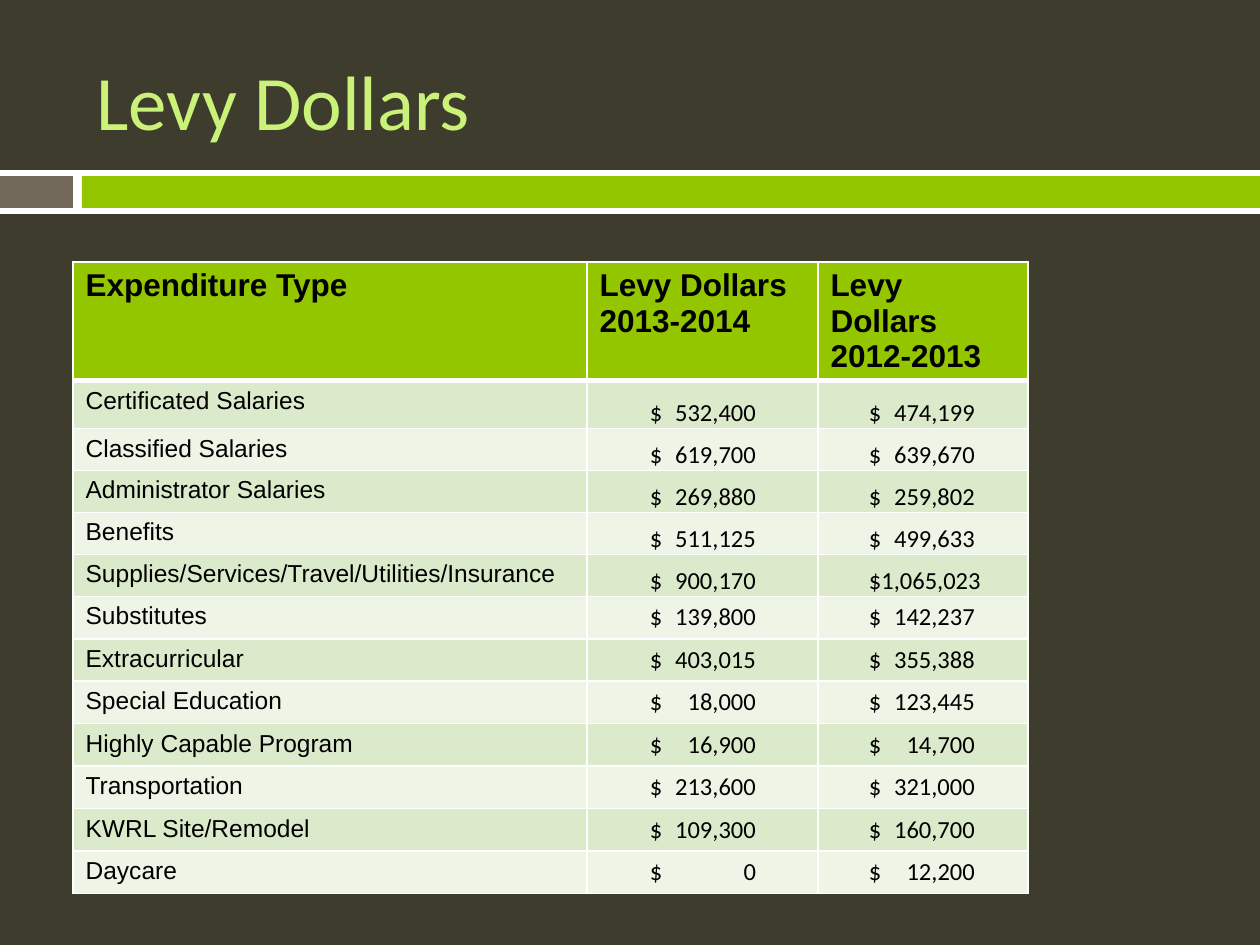
"""Build the Levy Dollars slide with its expenditure table."""
import pptx
import pptx.dml.color
import pptx.enum.shapes
import pptx.enum.text
import pptx.oxml
import pptx.oxml.ns
import pptx.util

ANCHOR = pptx.enum.text.MSO_ANCHOR
TITLE = "Levy Dollars"
BARS = [
    ((0, 170, 1260, 44), "FFFFFF"),
    ((0, 176, 73, 32), "71685A"),
    ((82, 176, 1178, 32), "94C600"),
]
HEADINGS = ["Expenditure Type", "Levy Dollars\n2013-2014", "Levy Dollars\n2012-2013"]
EXPENDITURES = [
    ("Certificated Salaries", "532,400", "474,199"),
    ("Classified Salaries", "619,700", "639,670"),
    ("Administrator Salaries", "269,880", "259,802"),
    ("Benefits", "511,125", "499,633"),
    ("Supplies/Services/Travel/Utilities/Insurance", "900,170", "1,065,023"),
    ("Substitutes", "139,800", "142,237"),
    ("Extracurricular", "403,015", "355,388"),
    ("Special Education", "18,000", "123,445"),
    ("Highly Capable Program", "16,900", "14,700"),
    ("Transportation", "213,600", "321,000"),
    ("KWRL Site/Remodel", "109,300", "160,700"),
    ("Daycare", "0", "12,200"),
]
COLUMN_WIDTHS = [514, 231, 210]
ROW_HEIGHTS = [76, 48] + [42] * 11
DOLLAR_INDENTS = [None, 63, 51]
AMOUNT_TAB = 106
BOTTOM_ANCHORED_ROWS = 5
HEADING_FILL = "94C600"
BAND_FILLS = ["EEF5E7", "DCEACC"]


def px(length):
    return pptx.util.Emu(round(length * 914400 / 126))


def colour(value):
    return pptx.dml.color.RGBColor.from_string(value)


def paint(part, value):
    part.fill.solid()
    part.fill.fore_color.rgb = colour(value)


def write(frame, text, size=14, font="Arial", ink="000000", bold=False, tab=None):
    for number, line in enumerate(text.split("\n")):
        paragraph = frame.add_paragraph() if number else frame.paragraphs[0]
        paragraph.alignment = pptx.enum.text.PP_ALIGN.LEFT
        if tab:
            stops = pptx.oxml.parse_xml(
                f'<a:tabLst {pptx.oxml.ns.nsdecls("a")}>'
                f'<a:tab pos="{px(tab)}" algn="r"/></a:tabLst>')
            paragraph._p.get_or_add_pPr().append(stops)
        run = paragraph.add_run()
        run.text = line
        run.font.size = pptx.util.Pt(size)
        run.font.name = font
        run.font.bold = bold
        run.font.color.rgb = colour(ink)


def outline(cell, top, bottom):
    for side, points in {"L": 1, "R": 1, "T": top, "B": bottom}.items():
        cell._tc.get_or_add_tcPr().append(pptx.oxml.parse_xml(
            f'<a:ln{side} {pptx.oxml.ns.nsdecls("a")} w="{pptx.util.Pt(points)}">'
            f'<a:solidFill><a:srgbClr val="FFFFFF"/></a:solidFill></a:ln{side}>'))


def write_amount(cell, amount, row, indent):
    fits = len(amount) <= len("000,000")
    write(cell.text_frame, f"$\t{amount}" if fits else f"${amount}",
          font="Calibri", tab=AMOUNT_TAB)
    cell.margin_left = px(indent)
    cell.margin_right = px(1)
    if row <= BOTTOM_ANCHORED_ROWS:
        cell.vertical_anchor = ANCHOR.BOTTOM
        cell.margin_top = px(1)
        cell.margin_bottom = 0


def add_expenditures(slide):
    rows = [HEADINGS, *EXPENDITURES]
    table = slide.shapes.add_table(
        len(rows), len(HEADINGS), px(73), px(262),
        px(sum(COLUMN_WIDTHS)), px(sum(ROW_HEIGHTS))).table
    for column, width in zip(table.columns, COLUMN_WIDTHS):
        column.width = px(width)
    for row, (entries, height) in enumerate(zip(rows, ROW_HEIGHTS)):
        table.rows[row].height = px(height)
        for column, entry in enumerate(entries):
            cell = table.cell(row, column)
            outline(cell, 3 if row == 1 else 1, 3 if row == 0 else 1)
            paint(cell, BAND_FILLS[row % 2] if row else HEADING_FILL)
            if row == 0:
                write(cell.text_frame, entry, size=18, bold=True)
            elif column == 0:
                write(cell.text_frame, entry)
            else:
                write_amount(cell, entry, row, DOLLAR_INDENTS[column])


def main():
    deck = pptx.Presentation()
    deck.slide_width, deck.slide_height = px(1260), px(945)
    slide = deck.slides.add_slide(deck.slide_layouts[5])
    paint(slide.background, "3E3D2D")
    for place, fill in BARS:
        bar = slide.shapes.add_shape(
            pptx.enum.shapes.MSO_SHAPE.RECTANGLE, *map(px, place))
        bar.shadow.inherit = False
        paint(bar, fill)
        bar.line.fill.background()
    title = slide.shapes.title
    title.left, title.top, title.width, title.height = map(px, (84, 32, 1124, 136))
    title.text_frame.vertical_anchor = ANCHOR.MIDDLE
    write(title.text_frame, TITLE, size=44, font="Calibri", ink="CAF278")
    add_expenditures(slide)
    deck.save("out.pptx")


if __name__ == "__main__":
    main()
